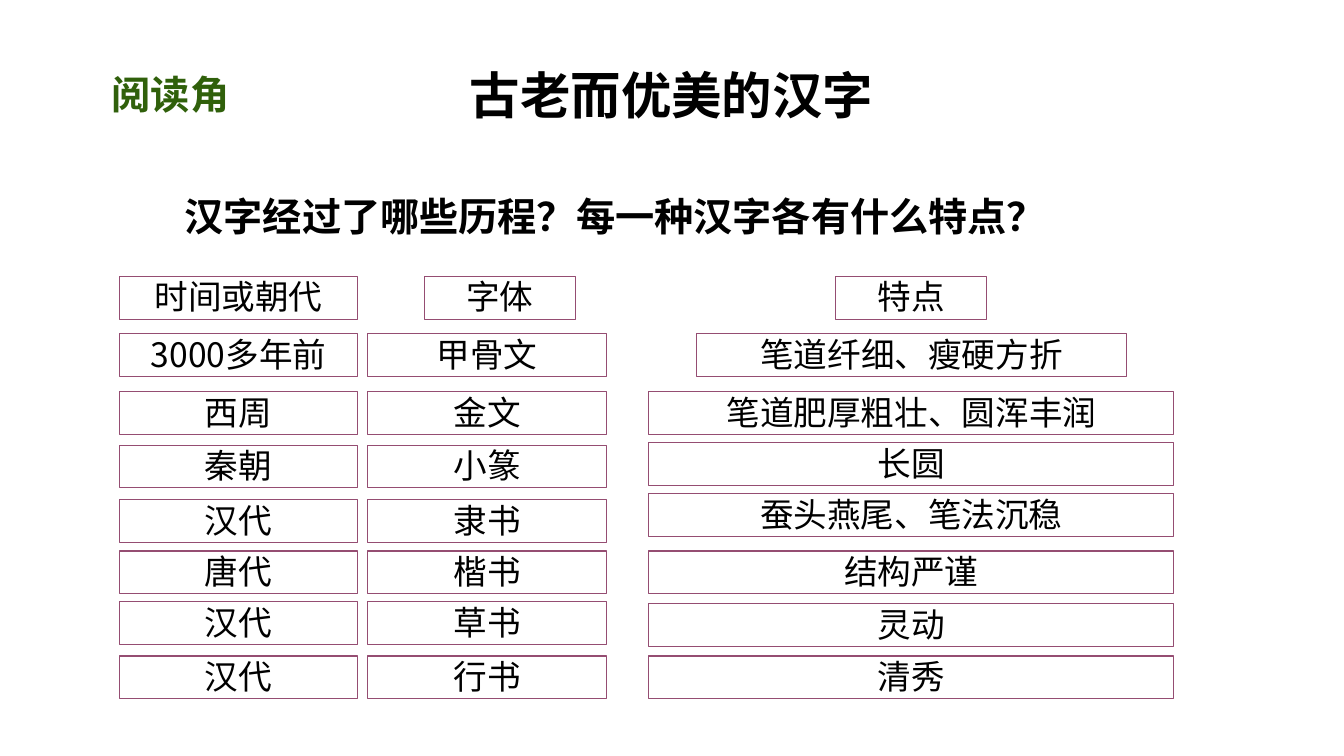
from pptx import Presentation
from pptx.dml.color import RGBColor
from pptx.enum.shapes import MSO_SHAPE as Shape
from pptx.enum.text import MSO_ANCHOR as Anchor, PP_ALIGN as Align
from pptx.oxml.ns import qn
from pptx.util import Inches, Pt
from lxml.etree import SubElement

BLACK = RGBColor(0x00, 0x00, 0x00)
GREEN = RGBColor(0x30, 0x60, 0x0B)
PLUM = RGBColor(0x95, 0x4D, 0x72)
CHINESE_FONT = "Noto Sans CJK SC"

GRID_COLUMNS, GRID_ROWS = 16, 9
BOX_HEIGHT = 0.51

# Each column: centre and width of its header, then of its body boxes.
TIME_COLUMN = (2.84, 2.84, 2.84, 2.84)
SCRIPT_COLUMN = (5.95, 1.8, 5.8, 2.84)
FEATURE_COLUMN = (10.85, 1.8, 10.85, 6.25)
SHORT_FEATURE_WIDTH = 5.12

LEFT_TOPS = (3.29, 3.97, 4.66, 5.3, 5.95, 6.56, 7.16, 7.81)
FEATURE_TOPS = (3.29, 3.97, 4.66, 5.27, 5.88, 6.56, 7.19, 7.81)

TIMES = ("时间或朝代", "3000多年前", "西周", "秦朝", "汉代", "唐代", "汉代", "汉代")
SCRIPTS = ("字体", "甲骨文", "金文", "小篆", "隶书", "楷书", "草书", "行书")
FEATURES = ("特点", "笔道纤细、瘦硬方折", "笔道肥厚粗壮、圆浑丰润", "长圆",
            "蚕头燕尾、笔法沉稳", "结构严谨", "灵动", "清秀")


def write_text(shape, text, size=24, font=CHINESE_FONT, color=BLACK, bold=False,
               align=Align.CENTER, anchor=Anchor.TOP, spacing=None, inset=0.05, wrap=True):
    frame = shape.text_frame
    frame.word_wrap = wrap
    frame.vertical_anchor = anchor
    frame.margin_top = frame.margin_bottom = Inches(inset)
    paragraph = frame.paragraphs[0]
    paragraph.alignment = align
    if spacing:
        paragraph.line_spacing = spacing
    run = paragraph.add_run()
    run.text = text
    run.font.size = Pt(size)
    run.font.bold = bold
    run.font.color.rgb = color
    run.font.name = font
    SubElement(run.font._element, qn("a:ea")).set("typeface", font)


class ReadingSlide:
    """Places elements on a 16 by 9 grid of the current slide."""

    def __init__(self, presentation):
        self.slide = presentation.slides.add_slide(presentation.slide_layouts[6])
        self.column = presentation.slide_width / GRID_COLUMNS
        self.row = presentation.slide_height / GRID_ROWS

    def area(self, left, top, width, height):
        return (round(left * self.column), round(top * self.row),
                round(width * self.column), round(height * self.row))

    def text(self, text, *place, **style):
        write_text(self.slide.shapes.add_textbox(*self.area(*place)), text, **style)

    def box(self, text, centre, top, width):
        place = self.area(centre - width / 2, top, width, BOX_HEIGHT)
        shape = self.slide.shapes.add_shape(Shape.RECTANGLE, *place)
        shape.shadow.inherit = False
        shape.fill.background()
        shape.line.color.rgb = PLUM
        shape.line.width = Pt(0.75)
        write_text(shape, text, inset=0)

    def box_column(self, texts, tops, column, first_width=None):
        """Stacks a header box and its body boxes; first_width is for the first body box."""
        header_centre, header_width, centre, width = column
        widths = [header_width, first_width or width] + [width] * (len(texts) - 2)
        centres = [header_centre] + [centre] * (len(texts) - 1)
        for text, box_centre, top, box_width in zip(texts, centres, tops, widths):
            self.box(text, box_centre, top, box_width)


def main():
    presentation = Presentation()
    presentation.slide_width = Inches(13.33)
    presentation.slide_height = Inches(7.5)

    page = ReadingSlide(presentation)
    page.text("汉字经过了哪些历程？每一种汉字各有什么特点？", 2.08, 2.12, 11.83, 0.79,
              size=28, bold=True, align=Align.JUSTIFY, spacing=1.2)
    page.box_column(TIMES, LEFT_TOPS, TIME_COLUMN)
    page.box_column(SCRIPTS, LEFT_TOPS, SCRIPT_COLUMN)
    page.box_column(FEATURES, FEATURE_TOPS, FEATURE_COLUMN, SHORT_FEATURE_WIDTH)
    page.text("阅读角", 1.02, 0.78, 2.02, 0.88,
              size=28, font="Arial", color=GREEN, bold=True, wrap=False)
    page.text("古老而优美的汉字", 5.47, 0.68, 5.05, 0.88,
              size=36, bold=True, anchor=Anchor.MIDDLE)
    presentation.save("out.pptx")


if __name__ == "__main__":
    main()
